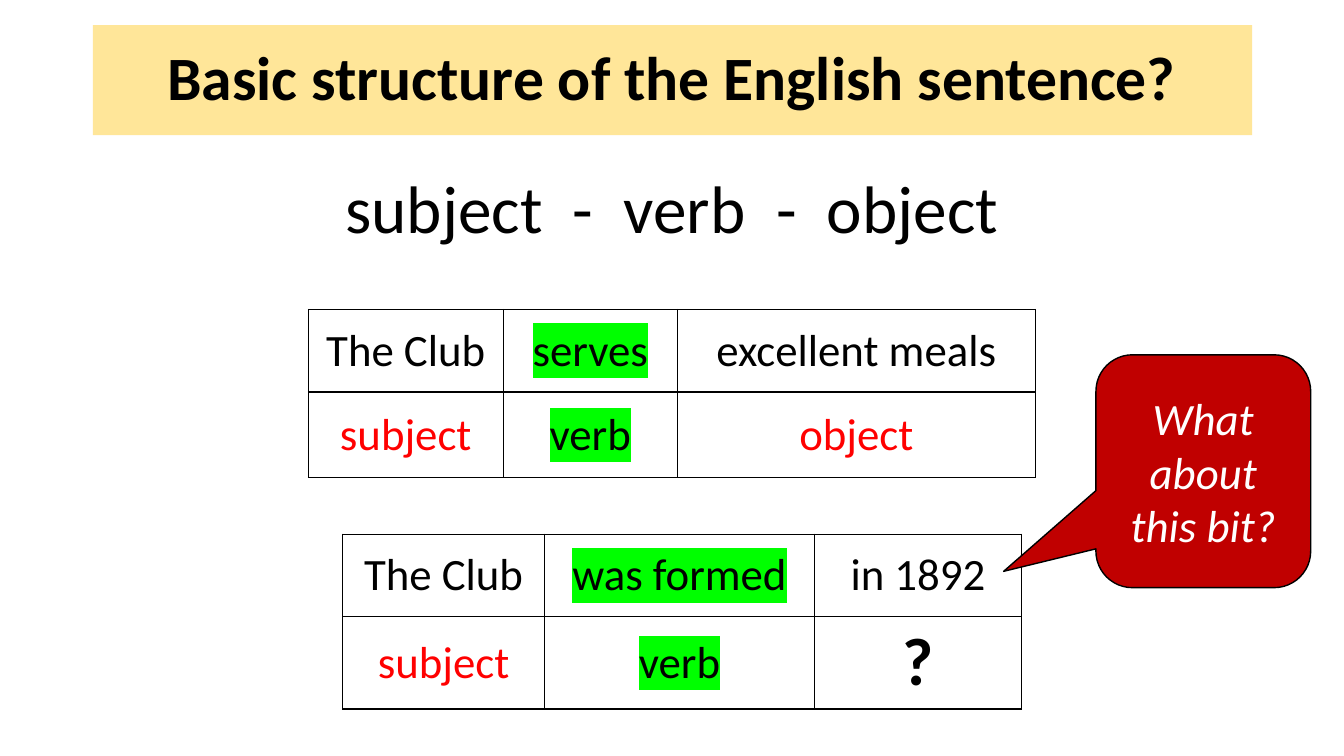
import pptx
import pptx.util
import pptx.dml.color
import pptx.enum.shapes
import pptx.enum.text
import pptx.oxml
import pptx.oxml.ns
from lxml import etree

Inches, Pt = pptx.util.Inches, pptx.util.Pt
RGBColor = pptx.dml.color.RGBColor
MIDDLE = pptx.enum.text.MSO_ANCHOR.MIDDLE
qn = pptx.oxml.ns.qn

BLACK = RGBColor(0x00, 0x00, 0x00)
WHITE = RGBColor(0xFF, 0xFF, 0xFF)
RED = RGBColor(0xFF, 0x00, 0x00)
DARK_RED = RGBColor(0xC0, 0x00, 0x00)
GREEN = RGBColor(0x00, 0xFF, 0x00)
CREAM = RGBColor(0xFF, 0xE6, 0x99)


def put_text(tf, text, size=32, color=BLACK, bold=False, italic=False,
             highlight=None, spacing=None):
    """Write one centred, formatted paragraph into a text frame."""
    tf.word_wrap = True
    p = tf.paragraphs[0]
    p.alignment = pptx.enum.text.PP_ALIGN.CENTER
    if spacing:
        p.line_spacing = spacing
    r = p.add_run()
    r.text = text
    font = r.font
    font.name, font.size = "Calibri", Pt(size)
    font.bold, font.italic = bold, italic
    font.color.rgb = color
    if highlight:
        mark = etree.Element(qn("a:highlight"))
        etree.SubElement(mark, qn("a:srgbClr"), val=str(highlight))
        r.font._element.find(qn("a:solidFill")).addnext(mark)


def border_cell(cell):
    """Draw a 1 pt black line on all four sides; call before filling the cell."""
    tc_pr = cell._tc.get_or_add_tcPr()
    for side in ("a:lnL", "a:lnR", "a:lnT", "a:lnB"):
        ln = etree.SubElement(tc_pr, qn(side), w=str(Pt(1)))
        fill = etree.SubElement(ln, qn("a:solidFill"))
        etree.SubElement(fill, qn("a:srgbClr"), val=str(BLACK))


class SlideBuilder:
    def __init__(self, prs):
        self.s = prs.slides.add_slide(prs.slide_layouts[5])

    def title(self, text, left, top, width, height):
        sp = self.s.shapes.title
        sp.left, sp.top = Inches(left), Inches(top)
        sp.width, sp.height = Inches(width), Inches(height)
        sp.fill.solid()
        sp.fill.fore_color.rgb = CREAM
        tf = sp.text_frame
        tf.auto_size = pptx.enum.text.MSO_AUTO_SIZE.NONE
        tf.vertical_anchor = MIDDLE
        put_text(tf, text, size=44, bold=True, spacing=0.9)

    def text(self, text, left, top, width, height, **style):
        sp = self.s.shapes.add_textbox(Inches(left), Inches(top),
                                       Inches(width), Inches(height))
        put_text(sp.text_frame, text, **style)

    def table(self, left, top, col_widths, row_heights, rows):
        """Each cell is a pair: its text and its text format."""
        frame = self.s.shapes.add_table(
            len(rows), len(col_widths), Inches(left), Inches(top),
            Inches(sum(col_widths)), Inches(sum(row_heights)))
        table = frame.table
        table.first_row = table.horz_banding = False
        for col, width in zip(table.columns, col_widths):
            col.width = Inches(width)
        for i, row in enumerate(rows):
            table.rows[i].height = Inches(row_heights[i])
            for j, (text, style) in enumerate(row):
                cell = table.cell(i, j)
                border_cell(cell)
                cell.fill.solid()
                cell.fill.fore_color.rgb = WHITE
                cell.vertical_anchor = MIDDLE
                put_text(cell.text_frame, text, **style)

    def callout(self, text, left, top, width, height, adjustments, **style):
        sp = self.s.shapes.add_shape(
            pptx.enum.shapes.MSO_SHAPE.ROUNDED_RECTANGULAR_CALLOUT,
            Inches(left), Inches(top), Inches(width), Inches(height))
        for i, value in enumerate(adjustments):
            sp.adjustments[i] = value
        sp.shadow.inherit = False
        sp.fill.solid()
        sp.fill.fore_color.rgb = DARK_RED
        sp.line.color.rgb = BLACK
        sp.line.width = Pt(1)
        sp.text_frame.vertical_anchor = MIDDLE
        put_text(sp.text_frame, text, **style)


def main():
    prs = pptx.Presentation()
    prs.slide_width, prs.slide_height = Inches(13.33), Inches(7.5)
    slide = SlideBuilder(prs)

    plain, role, verb = {}, {"color": RED}, {"highlight": GREEN}
    unknown = {"size": 48, "bold": True}
    row_heights = (0.82, 0.85)

    slide.title("Basic structure of the English sentence?", 0.92, 0.25, 11.5, 1.09)
    slide.table(3.06, 3.07, (1.93, 1.73, 3.55), row_heights, [
        [("The Club", plain), ("serves", verb), ("excellent meals", plain)],
        [("subject", role), ("verb", verb), ("object", role)],
    ])
    slide.table(3.4, 5.3, (2, 2.68, 2.05), row_heights, [
        [("The Club", plain), ("was formed", verb), ("in 1892", plain)],
        [("subject", role), ("verb", verb), ("?", unknown)],
    ])
    slide.text("subject  -  verb  -  object", 2.97, 1.6, 7.39, 0.91, size=48)
    slide.callout("What about this bit?", 10.87, 3.52, 2.13, 2.31,
                  (-0.93, 0.43, 0.17), color=WHITE, italic=True)
    prs.save("out.pptx")


if __name__ == "__main__":
    main()
